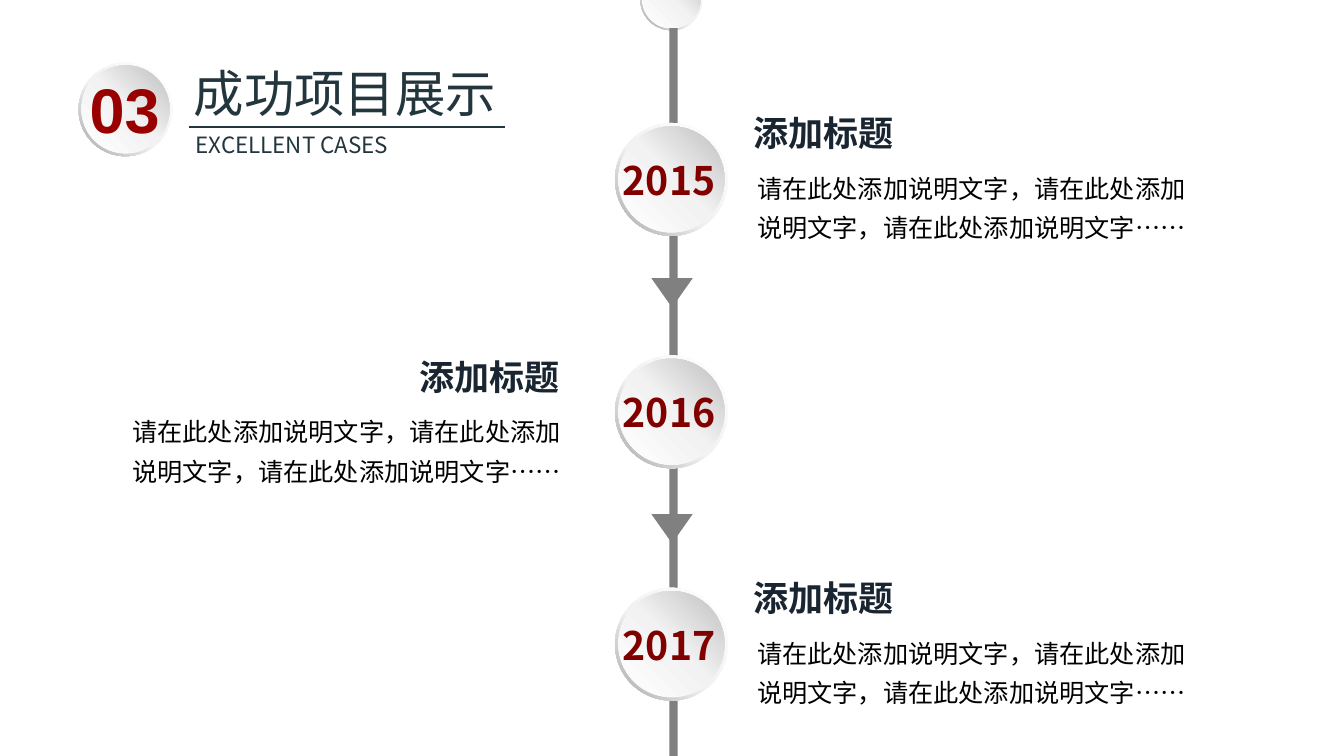
from dataclasses import dataclass
from lxml.etree import SubElement
from pptx import Presentation
from pptx.dml.color import RGBColor as RGB
from pptx.enum.shapes import MSO_CONNECTOR as LINE, MSO_SHAPE as SHAPE
from pptx.enum.text import MSO_AUTO_SIZE as FIT, PP_ALIGN as ALIGN
from pptx.oxml.ns import qn
from pptx.util import Inches as In, Pt


@dataclass(frozen=True)
class Theme:
    font: str = "Noto Sans CJK SC"
    digit: str = "Arial"
    teal: str = "23353D"
    navy: str = "192530"
    black: str = "000000"
    gray: str = "808080"
    wine: str = "800000"
    red: str = "990000"
    # Gradients: stops in percent, then the clockwise angle
    rim: tuple = (((0, "FFFFFF"), (55, "F2F2F2"), (100, "A6A6A6")), 135)
    face: tuple = (((0, "FFFFFF"), (51, "F2F2F2"), (100, "BFBFBF")), 315)
    # Type sizes
    top: int = 36
    sub: int = 16
    num: int = 45
    year: int = 28
    head: int = 25
    body: int = 18


T = Theme()
WIDE, HIGH = 13.33, 7.5
AXIS = 6.66            # centre of the balls
FIRST, STEP = 1.22, 2.305
BALL = 1.12
NOTE = "请在此处添加说明文字，" * 2 + "请在此处添加说明文字……"
CASES = [("2015", "right"), ("2016", "left"), ("2017", "right")]


def text(slide, box, words, size, color, bold=False, font=T.font,
         align=None, wrap=False, space=None, pad=(0.1, 0.05)):
    frame = slide.shapes.add_textbox(*map(In, box)).text_frame
    frame.word_wrap = wrap
    frame.auto_size = FIT.SHAPE_TO_FIT_TEXT
    frame.margin_left = frame.margin_right = In(pad[0])
    frame.margin_top = frame.margin_bottom = In(pad[1])
    para = frame.paragraphs[0]
    para.text = words
    para.alignment = align
    para.line_spacing = space
    para.font.size = Pt(size)
    para.font.bold = bold
    para.font.color.rgb = RGB.from_string(color)
    para.font.name = font
    # East Asian face follows the Latin one
    latin = para._p.find(".//" + qn("a:latin"))
    asian = SubElement(latin.getparent(), qn("a:ea"), typeface=font)
    latin.addnext(asian)


def shape(slide, kind, box, color=None):
    form = slide.shapes.add_shape(kind, *map(In, box))
    form.shadow.inherit = False
    form.line.fill.background()
    if color:
        form.fill.solid()
        form.fill.fore_color.rgb = RGB.from_string(color)
    return form


def shade(form, blend):
    stops, angle = blend
    form.fill.gradient()
    grad = form._element.spPr.find(qn("a:gradFill"))
    for part in list(grad):
        grad.remove(part)
    row = SubElement(grad, qn("a:gsLst"))
    for pos, color in stops:
        stop = SubElement(row, qn("a:gs"), pos=str(pos * 1000))
        SubElement(stop, qn("a:srgbClr"), val=color)
    SubElement(grad, qn("a:lin"), ang=str(angle * 60000), scaled="0")


def ball(slide, x, y, size):
    rim = shape(slide, SHAPE.DONUT, (x, y, size, size))
    rim.adjustments[0] = 0.062
    shade(rim, T.rim)
    gap = size * 0.03
    side = size - 2 * gap
    shade(shape(slide, SHAPE.OVAL, (x + gap, y + gap, side, side)), T.face)


def header(slide, x, y, w):
    # Section number
    ball(slide, x, y + 0.04, 0.93)
    text(slide, (x + 0.01, y + 0.07, 0.9, 0.86), "03", T.num, T.red,
         bold=True, font=T.digit)
    # Title, rule and subtitle
    left, base = x + 1.09, y + 0.68
    pad = (0.07, 0.04)
    text(slide, (left - 0.02, y, w - 1.05, 0.68), "成功项目展示",
         T.top, T.teal, pad=pad)
    text(slide, (left, base, w - 1.09, 0.34), "EXCELLENT CASES",
         T.sub, T.teal, align=ALIGN.JUSTIFY, wrap=True, pad=pad)
    rule = slide.shapes.add_connector(
        LINE.STRAIGHT, In(left), In(base), In(x + w), In(base))
    rule.line.color.rgb = RGB.from_string(T.teal)
    rule.line.width = Pt(1.75)
    SubElement(rule._element.spPr, qn("a:effectLst"))


def spine(slide, x, y, h):
    ball(slide, x - 0.31, y - 0.6, 0.62)
    shape(slide, SHAPE.RECTANGLE, (x - 0.02, y, 0.08, h), T.gray)


def arrow(slide, x, y):
    mark = shape(slide, SHAPE.ISOSCELES_TRIANGLE,
                 (x - 0.2, y, 0.41, 0.29), T.gray)
    mark.rotation = 180


def case(slide, y, year, side):
    # Year on the axis
    ball(slide, AXIS - BALL / 2, y, BALL)
    text(slide, (AXIS - 0.58, y + 0.28, 1.17, 0.57), year,
         T.year, T.wine, bold=True)
    # Heading and note beside it
    wide, short = 4.58, 1.6
    if side == "right":
        align, top = ALIGN.LEFT, y - 0.16
        note, head = AXIS + 0.75, AXIS + 0.72
    else:
        align, top = ALIGN.RIGHT, y - 0.05
        note, head = AXIS - 1 - wide, AXIS - 1.01 - short
    text(slide, (note, top + 0.52, wide, 0.89), NOTE, T.body, T.black,
         align=align, wrap=True, space=1.3)
    text(slide, (head, top, short, 0.52), "添加标题", T.head, T.navy,
         bold=True, align=align)


def main():
    deck = Presentation()
    deck.slide_width, deck.slide_height = In(WIDE), In(HIGH)
    slide = deck.slides.add_slide(deck.slide_layouts[6])
    header(slide, 0.78, 0.58, 4.23)
    spine(slide, AXIS, 0.28, HIGH - 0.28)
    for i, (year, side) in enumerate(CASES):
        case(slide, FIRST + i * STEP, year, side)
    for i in range(len(CASES) - 1):
        arrow(slide, AXIS, 2.76 + i * 2.34)
    deck.save("out.pptx")


if __name__ == "__main__":
    main()
